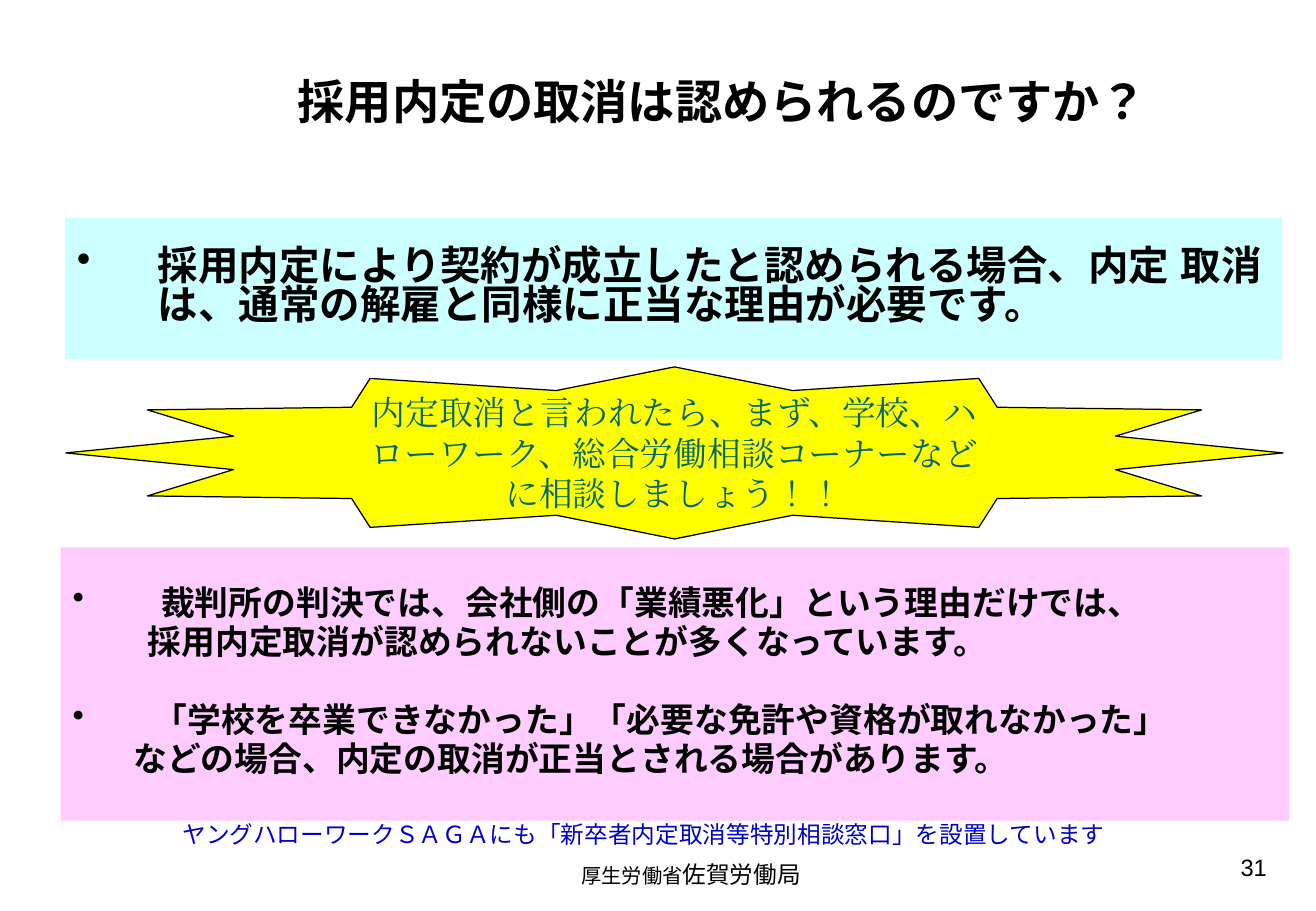
import pptx
import pptx.util
import pptx.dml.color
import pptx.enum.lang
import pptx.enum.shapes
import pptx.enum.text
import pptx.oxml.ns
import lxml.etree
import dataclasses

Pt = pptx.util.Pt
Align = pptx.enum.text.PP_ALIGN
Anchor = pptx.enum.text.MSO_ANCHOR
Shape = pptx.enum.shapes.MSO_SHAPE
qn = pptx.oxml.ns.qn


@dataclasses.dataclass(frozen=True)
class Theme:
    font: str = "Arial"
    serif: str = "TeX Gyre Pagella"
    gothic: str = "Noto Sans CJK JP"
    ink: str = "000000"
    teal: str = "006666"
    blue: str = "0000CC"
    cyan: str = "CCFFFF"
    pink: str = "FFCCFF"
    yellow: str = "FFFF00"
    title: int = 28
    lead: int = 24
    body: int = 20
    note: int = 14
    small: int = 12


THEME = Theme()


def put(item, values):
    for name, value in values.items():
        setattr(item, name, value)


def color(code):
    return pptx.dml.color.RGBColor.from_string(code)


def write(para, text, size, font=THEME.font, ink=THEME.ink, bold=False):
    run = para.add_run()
    run.text = text
    put(run.font, {"name": font, "size": Pt(size), "bold": bold,
                   "language_id": pptx.enum.lang.MSO_LANGUAGE_ID.JAPANESE})
    run.font.color.rgb = color(ink)
    east = lxml.etree.SubElement(run.font._element, qn("a:ea"))
    east.set("typeface", font)


def setup(shape, anchor=Anchor.TOP):
    """Wrap the text of a shape and return its first paragraph."""
    frame = shape.text_frame
    put(frame, {"word_wrap": True, "vertical_anchor": anchor,
                "auto_size": pptx.enum.text.MSO_AUTO_SIZE.NONE})
    para = frame.paragraphs[0]
    para.alignment = Align.LEFT
    return para


def label(slide, box, align=Align.LEFT):
    para = setup(slide.shapes.add_textbox(*map(Pt, box)))
    para.alignment = align
    return para


def panel(slide, kind, box, fill, line=None):
    shape = slide.shapes.add_shape(kind, *map(Pt, box))
    shape.shadow.inherit = False
    shape.fill.solid()
    shape.fill.fore_color.rgb = color(fill)
    if line:
        shape.line.color.rgb = color(line)
        shape.line.width = Pt(0.75)
    else:
        shape.line.fill.background()
    return shape


def indent(para, left, bullet):
    props = para._p.get_or_add_pPr()
    props.set("marL", str(Pt(left)))
    props.set("indent", str(Pt(-left if bullet else 0)))
    if bullet:
        mark = lxml.etree.SubElement(props, qn("a:buChar"))
        mark.set("char", "•")


def points(shape, size, rows):
    """Fill a panel with bold rows of (text, left, bullet, space before)."""
    para = setup(shape, Anchor.MIDDLE)
    for index, (text, left, bullet, gap) in enumerate(rows):
        if index:
            para = shape.text_frame.add_paragraph()
        put(para, {"alignment": Align.LEFT, "line_spacing": 0.8,
                   "space_before": Pt(gap)})
        indent(para, left, bullet)
        write(para, text, size, bold=True)


def heading(slide, text, box):
    title = slide.shapes.title
    put(title, dict(zip(("left", "top", "width", "height"), map(Pt, box))))
    para = setup(title)
    title.text_frame.margin_left = Pt(63)
    put(para, {"alignment": Align.CENTER, "line_spacing": 0.8})
    write(para, text, THEME.title, bold=True)


def main():
    deck = pptx.Presentation()
    put(deck, {"slide_width": Pt(780), "slide_height": Pt(540)})
    slide = deck.slides.add_slide(deck.slide_layouts[5])

    page = label(slide, (576, 502, 182, 37), Align.RIGHT)
    write(page, "31", THEME.note)
    heading(slide, "採用内定の取消は認められるのですか？", (33, 46, 734.5, 45))

    rule = panel(slide, Shape.RECTANGLE, (38.5, 129, 721.5, 84), THEME.cyan)
    points(rule, THEME.lead, [
        ("採用内定により契約が成立したと認められる場合、内定 取消は、"
         "通常の解雇と同様に正当な理由が必要です。", 48, True, 4.8)])

    cases = panel(slide, Shape.RECTANGLE, (36, 324.5, 728, 162), THEME.pink)
    points(cases, THEME.body, [
        ("裁判所の判決では、会社側の「業績悪化」という理由だけでは、", 52.5, True, 4),
        ("採用内定取消が認められないことが多くなっています。", 44.5, False, 4),
        ("「学校を卒業できなかった」「必要な免許や資格が取れなかった」", 48, True, 27),
        ("などの場合、内定の取消が正当とされる場合があります。", 36, False, 4)])

    star = panel(slide, Shape.STAR_12_POINT, (39, 217.5, 721.5, 102),
                 THEME.yellow, THEME.ink)
    advice = setup(star, Anchor.MIDDLE)
    advice.alignment = Align.CENTER
    write(advice, "内定取消と言われたら、まず、学校、ハローワーク、"
          "総合労働相談コーナーなどに相談しましょう！！",
          THEME.body, THEME.serif, THEME.teal)

    office = label(slide, (337.5, 506, 176, 24.5))
    write(office, "厚生労働省", THEME.small)
    write(office, "佐賀労働局", THEME.note)

    desk = label(slide, (101, 482.5, 566, 24.5))
    write(desk, "ヤングハローワークＳＡＧＡにも「新卒者内定取消等特別相談窓口」を設置しています",
          THEME.note, THEME.gothic, THEME.blue)

    deck.save("out.pptx")


if __name__ == "__main__":
    main()
